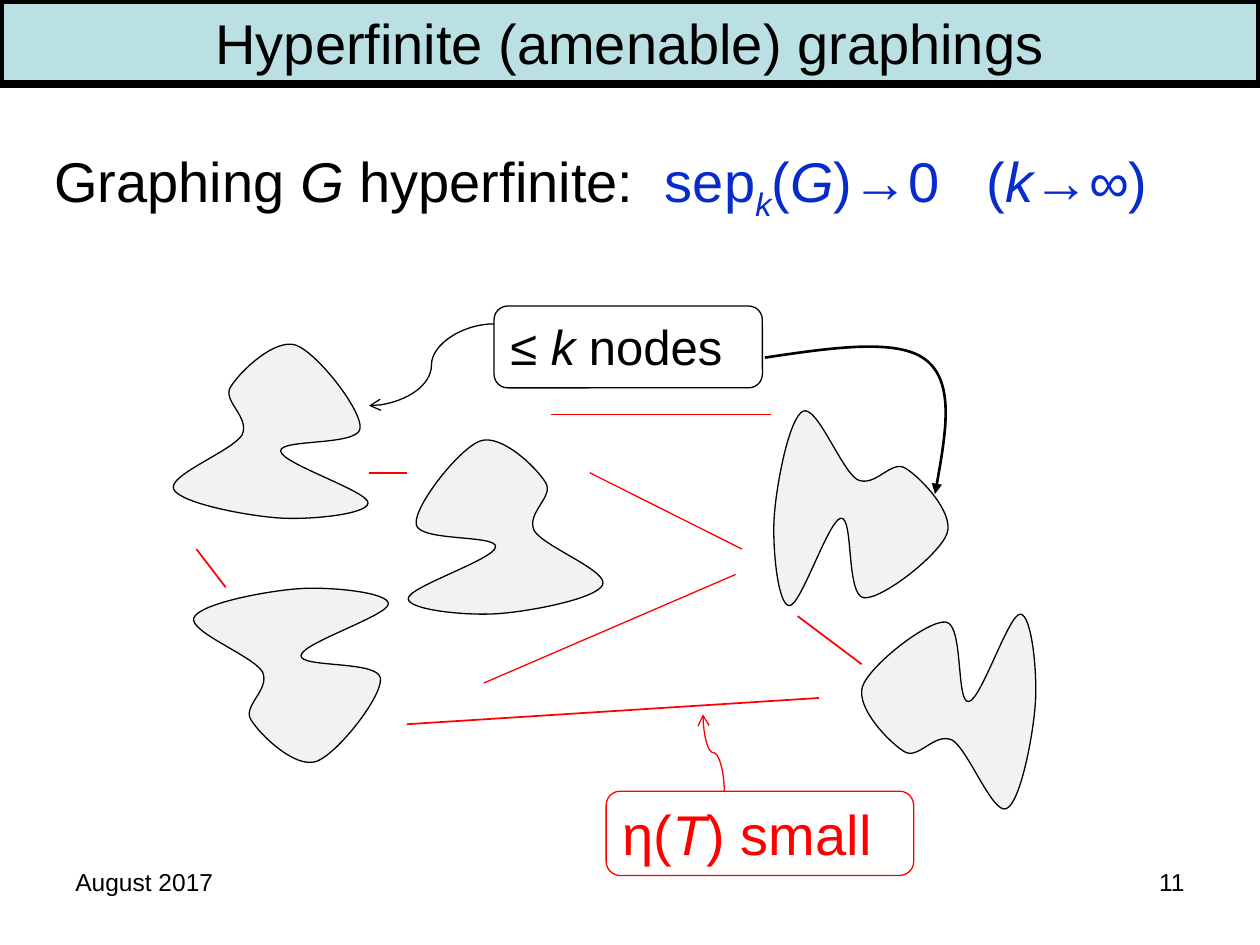
from lxml import etree
from pptx import Presentation
from pptx import util as u
from pptx.dml.color import RGBColor
from pptx.enum import shapes, text
from pptx.oxml.ns import qn

cm = u.Cm
BLACK, RED, BLUE = "000000", "FF0000", "072CCB"
LEFT, RIGHT, MID = text.PP_ALIGN.LEFT, text.PP_ALIGN.RIGHT, text.PP_ALIGN.CENTER


def paint(shape, line, width, fill=None, tip=None):
    """Set fill, outline and arrowhead, and drop the shadow."""
    if fill:
        shape.fill.solid()
        shape.fill.fore_color.rgb = RGBColor.from_string(fill)
    elif hasattr(shape, "fill"):
        shape.fill.background()
    shape.line.color.rgb = RGBColor.from_string(line)
    shape.line.width = u.Pt(width)
    props = shape._element.spPr
    if tip:
        etree.SubElement(props.find(qn("a:ln")), qn("a:tailEnd"), type=tip)
    etree.SubElement(props, qn("a:effectLst"))


def write(shape, words, size=32, color=BLACK, italic=False, sub=False, align=LEFT):
    """Add a run to the shape's paragraph."""
    par = shape.text_frame.paragraphs[0]
    par.alignment = align
    run = par.add_run()
    run.text = words
    run.font.name = "Arial"
    run.font.size = u.Pt(size)
    run.font.italic = italic
    run.font.color.rgb = RGBColor.from_string(color)
    if sub:
        run._r.get_or_add_rPr().set("baseline", "-25000")


deck = Presentation()
deck.slide_width, deck.slide_height = cm(25.4), cm(19.05)
slide = deck.slides.add_slide(deck.slide_layouts[5])
parts = slide.shapes

# Title bar
title = parts.title
title.left, title.top, title.width, title.height = cm(0), cm(0), cm(25.4), cm(1.7)
title.text_frame.auto_size = text.MSO_AUTO_SIZE.NONE
title.text_frame.vertical_anchor = text.MSO_ANCHOR.MIDDLE
paint(title, BLACK, 4.5, fill="BBE0E3")
write(title, "Hyperfinite (amenable) graphings", align=MID)

# Date and slide number
for x, words, align in [(1.27, "August 2017", LEFT), (18.21, "11", RIGHT)]:
    foot = parts.add_textbox(cm(x), cm(17.35), cm(5.92), cm(1.32))
    foot.text_frame.word_wrap = True
    write(foot, words, size=14, align=align)

# Definition
claim = parts.add_textbox(cm(0.84), cm(2.82), cm(22.73), cm(1.63))
claim.text_frame.word_wrap = False
for words, color, italic, sub in [
    ("Graphing ", BLACK, False, False),
    ("G ", BLACK, True, False),
    ("hyperfinite:  ", BLACK, False, False),
    ("sep", BLUE, False, False),
    ("k", BLUE, True, True),
    ("(", BLUE, False, False),
    ("G", BLUE, True, False),
    (")→0   (", BLUE, False, False),
    ("k", BLUE, True, False),
    ("→∞)", BLUE, False, False),
]:
    write(claim, words, color=color, italic=italic, sub=sub)

# Curved outlines: a start point, then three points for each Bézier piece
blob = [
    (-0.76, -0.84),
    (-0.58, -1.14), (0.13, -1.83), (0.56, -1.68),
    (0.99, -1.52), (1.9, -0.36), (1.85, 0),
    (1.8, 0.36), (0.2, 0.2), (0.25, 0.46),
    (0.28, 0.71), (2.03, 1.27), (2.01, 1.5),
    (2.01, 1.73), (0.81, 1.85), (0.18, 1.8),
    (-0.48, 1.75), (-1.78, 1.5), (-1.91, 1.22),
    (-2.03, 0.94), (-0.74, 0.46), (-0.53, 0.13),
    (-0.36, -0.23), (-0.94, -0.56), (-0.76, -0.84),
]
sweep = [
    (15.42, 7.21),
    (16.76, 7.01), (18.11, 6.81), (18.67, 7.26),
    (19.25, 7.72), (19.05, 8.84), (18.85, 9.96),
]
# outline, centre, horizontal and vertical flip, turn
for pts, x, y, fx, fy, turn in [
    (blob, 5.41, 8.64, 1, 1, 0),
    (blob, 5.82, 13.67, 1, -1, 0),
    (blob, 10.24, 10.57, -1, 1, 0),
    (blob, 17.4, 10.19, 1, 1, 90),
    (blob, 19.08, 14.38, 1, 1, 270),
    (sweep, 0, 0, 1, 1, 0),
]:
    spots = [(cm(x + fx * a), cm(y + fy * b)) for a, b in pts]
    pen = parts.build_freeform(*spots[0])
    pen.add_line_segments(spots[1:], close=pts is blob)
    form = pen.convert_to_shape()
    form.rotation = turn
    legs = list(form._element.iter(qn("a:lnTo")))
    for i in range(0, len(pts) - 1, 3):
        bend = etree.Element(qn("a:cubicBezTo"))
        legs[i].addprevious(bend)
        for leg in legs[i:i + 3]:
            bend.append(leg[0])
            leg.getparent().remove(leg)
    if pts is blob:
        paint(form, BLACK, 0.75, fill="F2F2F2")
    else:
        paint(form, BLACK, 1.5, tip="triangle")

# Edges between the pieces
for x1, y1, x2, y2, width in [
    (11.1, 8.36, 15.54, 8.36, 0.75),
    (11.89, 9.53, 14.96, 11.07, 0.75),
    (9.75, 13.77, 14.83, 11.58, 0.75),
    (3.96, 11.07, 4.55, 11.84, 1),
    (16.08, 12.42, 17.37, 13.39, 1),
    (7.44, 9.53, 8.2, 9.53, 1),
    (8.2, 14.6, 16.51, 14.07, 1),
]:
    edge = parts.add_connector(
        shapes.MSO_CONNECTOR.STRAIGHT, cm(x1), cm(y1), cm(x2), cm(y2))
    paint(edge, RED, width)

# Curved arrows from the labels
for x1, y1, x2, y2, turn, color in [
    (9.96, 6.53, 7.44, 8.18, 0, BLACK),
    (13.61, 15.39, 15.16, 14.96, 270, RED),
]:
    arrow = parts.add_connector(
        shapes.MSO_CONNECTOR.CURVE, cm(x1), cm(y1), cm(x2), cm(y2))
    if turn:
        arrow._element.spPr.find(qn("a:xfrm")).set("rot", str(turn * 60000))
    paint(arrow, color, 0.75, tip="arrow")

# Labels
for x, y, w, h, fill, color, size, anchor, runs in [
    (9.96, 6.17, 5.41, 1.65, "FFFFFF", BLACK, 28, text.MSO_ANCHOR.TOP,
     ["≤ ", "k ", "nodes"]),
    (12.22, 15.95, 6.2, 1.7, None, RED, 32, text.MSO_ANCHOR.MIDDLE,
     ["η(", "T", ") small"]),
]:
    label = parts.add_shape(
        shapes.MSO_SHAPE.ROUNDED_RECTANGLE, cm(x), cm(y), cm(w), cm(h))
    label.text_frame.vertical_anchor = anchor
    paint(label, color, 0.75, fill=fill)
    for i, words in enumerate(runs):
        write(label, words, size=size, color=color, italic=i == 1)

deck.save("out.pptx")
